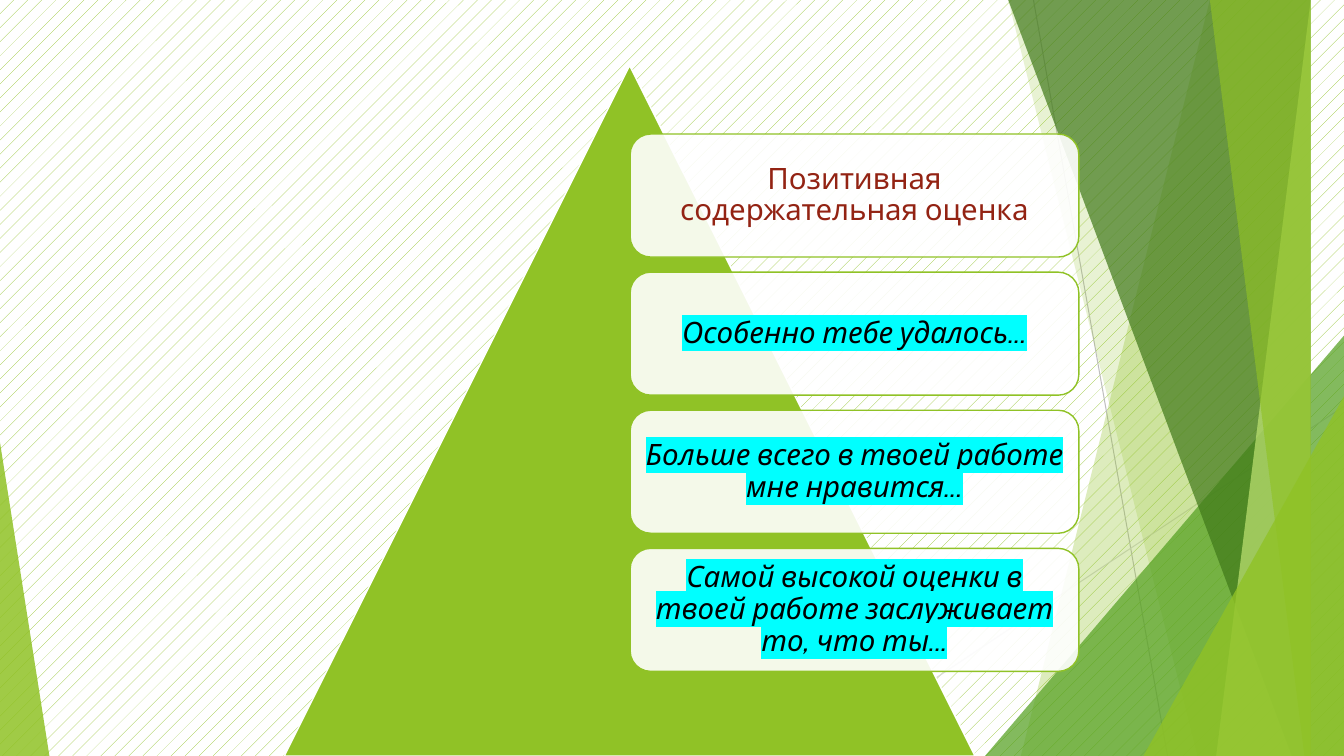
from dataclasses import dataclass

from lxml import etree
from pptx import Presentation
from pptx.dml.color import RGBColor
from pptx.enum import dml, shapes, text
from pptx.oxml import ns
from pptx.util import Inches, Pt


@dataclass(frozen=True)
class Theme:
    lime: str = "90C226"
    pale_lime: str = "C0E474"
    green: str = "54A021"
    forest: str = "3F7819"
    white: str = "FFFFFF"
    black: str = "000000"
    heading: str = "932313"
    marker: str = "00FFFF"
    font: str = "Cabin"
    text_size: float = 21
    outline: float = 1
    hairline: float = 0.75


@dataclass(frozen=True)
class Ray:
    start: tuple[float, float]
    end: tuple[float, float]
    color: str


@dataclass(frozen=True)
class Band:
    """Four-sided facet that reaches the right edge of the slide."""
    top_x: float
    bottom_x: float
    color: str
    opacity: int


@dataclass(frozen=True)
class Wedge:
    """Triangle standing on the bottom edge; apex runs from 0 (left) to 1 (right)."""
    left: float
    top: float
    width: float
    apex: float
    color: str
    opacity: int = 100


THEME = Theme()
WIDTH, HEIGHT = 13.33, 7.5
BAND_TOP = -0.01
CARD_LEFT, CARD_TOP, CARD_WIDTH, CARD_HEIGHT = 6.25, 1.33, 4.45, 1.22
CARD_STEP = 1.37
CORNER_INSET, TEXT_INSET = 0.06, 0.09

RAYS = [
    Ray((10.25, 0), (11.58, HEIGHT), "BFBFBF"),
    Ray((WIDTH, 4.03), (8.12, HEIGHT), "D9D9D9"),
]
FACETS = [
    Band(12.28, 10.04, THEME.lime, 30),
    Band(10.5, 11.83, THEME.lime, 20),
    Wedge(9.77, 3.33, 3.56, 1, THEME.green, 72),
    Band(10.21, 12.91, THEME.forest, 70),
    Band(13.03, 11.92, THEME.pale_lime, 70),
    Band(11.96, 13.18, THEME.lime, 65),
    Wedge(11.34, 3.93, 1.99, 1, THEME.lime, 80),
    Wedge(0, 4.39, 0.49, 0, THEME.lime, 85),
]
PYRAMID = Wedge(2.82, 0.65, 6.85, 0.5, THEME.lime)
HEADING = "Позитивная содержательная оценка"
PRAISES = [
    "Особенно тебе удалось...",
    "Больше всего в твоей работе мне нравится...",
    "Самой высокой оценки в твоей работе заслуживает то, что ты...",
]


def rgb(color: str) -> RGBColor:
    return RGBColor.from_string(color)


def paint(shape, color: str, opacity: int = 100, outline: str | None = None) -> None:
    shape.shadow.inherit = False
    shape.fill.solid()
    shape.fill.fore_color.rgb = rgb(color)
    if opacity < 100:
        tint = shape._element.spPr.find(ns.qn("a:solidFill"))[0]
        etree.SubElement(tint, ns.qn("a:alpha"), val=str(opacity * 1000))
    if outline:
        shape.line.color.rgb = rgb(outline)
        shape.line.width = Pt(THEME.outline)
    else:
        shape.line.fill.background()


def draw_ray(slide, ray: Ray) -> None:
    line = slide.shapes.add_connector(
        shapes.MSO_CONNECTOR.STRAIGHT, *map(Inches, ray.start + ray.end))
    line.line.color.rgb = rgb(ray.color)
    line.line.width = Pt(THEME.hairline)
    etree.SubElement(line._element.spPr, ns.qn("a:effectLst"))


def draw_band(slide, band: Band) -> None:
    outline = slide.shapes.build_freeform(band.top_x, BAND_TOP, scale=Inches(1))
    outline.add_line_segments(
        [(WIDTH, BAND_TOP), (WIDTH, HEIGHT), (band.bottom_x, HEIGHT)])
    paint(outline.convert_to_shape(), band.color, band.opacity)


def draw_wedge(slide, wedge: Wedge, outline: str | None = None) -> None:
    triangle = slide.shapes.add_shape(
        shapes.MSO_SHAPE.ISOSCELES_TRIANGLE, Inches(wedge.left), Inches(wedge.top),
        Inches(wedge.width), Inches(HEIGHT - wedge.top))
    triangle.adjustments[0] = wedge.apex
    paint(triangle, wedge.color, wedge.opacity, outline)


def draw_card(slide, row: int):
    card = slide.shapes.add_shape(
        shapes.MSO_SHAPE.ROUNDED_RECTANGLE, Inches(CARD_LEFT),
        Inches(CARD_TOP + row * CARD_STEP), Inches(CARD_WIDTH), Inches(CARD_HEIGHT))
    paint(card, THEME.white, 90, THEME.lime)
    return card


def write(shape, words: str, *, color: str, italic: bool = False,
          highlight: str | None = None) -> None:
    frame = shape.text_frame
    frame.word_wrap = True
    frame.auto_size = text.MSO_AUTO_SIZE.NONE
    frame.vertical_anchor = text.MSO_ANCHOR.MIDDLE
    frame.margin_left = frame.margin_right = Inches(TEXT_INSET)
    frame.margin_top = frame.margin_bottom = Inches(TEXT_INSET)
    paragraph = frame.paragraphs[0]
    paragraph.alignment = text.PP_ALIGN.CENTER
    paragraph.line_spacing = 0.9
    run = paragraph.add_run()
    run.text = words
    run.font.name = THEME.font
    run.font.size = Pt(THEME.text_size)
    run.font.italic = italic
    run.font.color.rgb = rgb(color)
    if highlight:
        marker = etree.Element(ns.qn("a:highlight"))
        etree.SubElement(marker, ns.qn("a:srgbClr"), val=highlight)
        run.font._element.find(ns.qn("a:solidFill")).addnext(marker)


def place_title(slide, words: str) -> None:
    """Lay the title placeholder over the first card."""
    title = slide.shapes.title
    title.left, title.top = Inches(CARD_LEFT + CORNER_INSET), Inches(CARD_TOP + CORNER_INSET)
    title.width = Inches(CARD_WIDTH - 2 * CORNER_INSET)
    title.height = Inches(CARD_HEIGHT - 2 * CORNER_INSET)
    write(title, words, color=THEME.heading)
    slide.shapes._spTree.append(title._element)


def main() -> None:
    deck = Presentation()
    deck.slide_width, deck.slide_height = Inches(WIDTH), Inches(HEIGHT)
    slide = deck.slides.add_slide(deck.slide_layouts.get_by_name("Title Only"))
    backdrop = slide.background.fill
    backdrop.patterned()
    backdrop.pattern = dml.MSO_PATTERN.PERCENT_5
    backdrop.fore_color.rgb = rgb(THEME.lime)
    backdrop.back_color.rgb = rgb(THEME.white)

    for ray in RAYS:
        draw_ray(slide, ray)
    for facet in FACETS:
        if isinstance(facet, Band):
            draw_band(slide, facet)
        else:
            draw_wedge(slide, facet)
    draw_wedge(slide, PYRAMID, outline=THEME.white)

    draw_card(slide, 0)
    place_title(slide, HEADING)
    for row, praise in enumerate(PRAISES, start=1):
        write(draw_card(slide, row), praise, color=THEME.black, italic=True,
              highlight=THEME.marker)
    deck.save("out.pptx")


if __name__ == "__main__":
    main()
